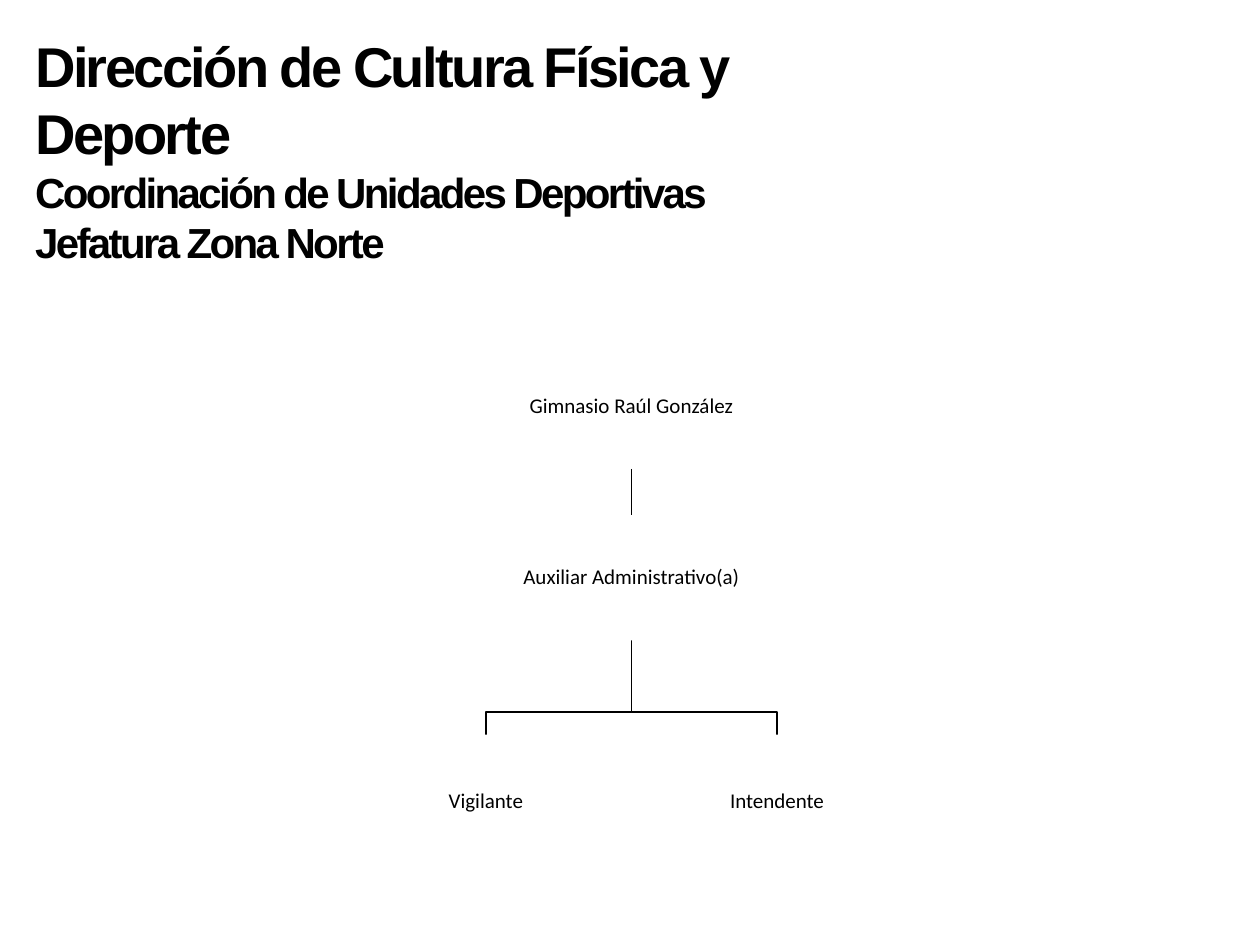
from dataclasses import dataclass

from pptx import Presentation
from pptx.dml.color import RGBColor
from pptx.enum.shapes import MSO_CONNECTOR, MSO_SHAPE
from pptx.enum.text import MSO_ANCHOR, PP_ALIGN
from pptx.oxml.ns import qn
from pptx.util import Cm, Pt

STRAIGHT = MSO_CONNECTOR.STRAIGHT
RECTANGLE = MSO_SHAPE.RECTANGLE
TOP, MIDDLE = MSO_ANCHOR.TOP, MSO_ANCHOR.MIDDLE
LEFT, CENTER = PP_ALIGN.LEFT, PP_ALIGN.CENTER


@dataclass(frozen=True)
class Theme:
    ink: RGBColor = RGBColor(0, 0, 0)
    paper: RGBColor = RGBColor(255, 255, 255)
    heading_font: str = "Arial"
    role_font: str = "Calibri"
    title_size: int = 32
    subtitle_size: int = 24
    role_size: int = 12
    line_width: int = 1


@dataclass(frozen=True)
class Box:
    left: float
    top: float
    width: float
    height: float

    @property
    def center(self):
        return self.left + self.width / 2

    @property
    def bottom(self):
        return self.top + self.height

    def lengths(self):
        return [Cm(side) for side in (self.left, self.top, self.width, self.height)]


THEME = Theme()


def write(paragraph, text, *, font, size, bold=False, tracking=None,
          align=LEFT, line_spacing=None):
    paragraph.alignment = align
    paragraph.line_spacing = line_spacing
    run = paragraph.add_run()
    run.text = text
    run.font.name = font
    run.font.size = Pt(size)
    run.font.bold = bold
    run.font.color.rgb = THEME.ink
    if tracking is not None:
        run.font._element.set("spc", str(int(tracking * 100)))


def set_frame(frame, *, anchor, inset_x, inset_y):
    frame.word_wrap = True
    frame.vertical_anchor = anchor
    frame.margin_left = frame.margin_right = Cm(inset_x)
    frame.margin_top = frame.margin_bottom = Cm(inset_y)


def draw_heading(slide, box, lines):
    frame = slide.shapes.add_textbox(*box.lengths()).text_frame
    set_frame(frame, anchor=TOP, inset_x=0.25, inset_y=0.13)
    for index, (text, size) in enumerate(lines):
        paragraph = frame.add_paragraph() if index else frame.paragraphs[0]
        write(paragraph, text, font=THEME.heading_font, size=size, bold=True,
              tracking=-1.5)


def draw_role(shapes, box, title):
    role = shapes.add_shape(RECTANGLE, *box.lengths())
    role.shadow.inherit = False
    role.fill.solid()
    role.fill.fore_color.rgb = THEME.paper
    role.line.fill.background()
    set_frame(role.text_frame, anchor=MIDDLE, inset_x=0.02, inset_y=0.02)
    write(role.text_frame.paragraphs[0], title, font=THEME.role_font,
          size=THEME.role_size, align=CENTER, line_spacing=0.9)


def style_line(line):
    line.color.rgb = THEME.ink
    line.width = Pt(THEME.line_width)


def draw_link(shapes, parent, child):
    link = shapes.add_connector(STRAIGHT, Cm(parent.center), Cm(parent.bottom),
                                Cm(child.center), Cm(child.top))
    style_line(link.line)
    properties = link._element.spPr
    properties.append(properties.makeelement(qn("a:effectLst"), {}))


def draw_branch(shapes, parent, child, drop):
    bend = child.top - drop
    corners = [(parent.center, bend), (child.center, bend), (child.center, child.top)]
    builder = shapes.build_freeform(Cm(parent.center), Cm(parent.bottom))
    builder.add_line_segments([(Cm(x), Cm(y)) for x, y in corners], close=False)
    branch = builder.convert_to_shape()
    branch.shadow.inherit = False
    branch.fill.background()
    style_line(branch.line)


def draw_organization(slide, box, venue, assistant, staff):
    role_width, role_height, level_gap = 6.04, 2.52, 0.94
    staff_width, staff_height, branch_drop = 4.93, 2.69, 0.46
    role_left = box.center - role_width / 2
    venue_box = Box(role_left, box.top, role_width, role_height)
    assistant_box = Box(role_left, venue_box.bottom + level_gap, role_width, role_height)
    step = (box.width - staff_width) / (len(staff) - 1)
    staff_boxes = [Box(box.left + index * step, box.bottom - staff_height,
                       staff_width, staff_height) for index in range(len(staff))]

    shapes = slide.shapes.add_group_shape().shapes
    for staff_box in staff_boxes:
        draw_branch(shapes, assistant_box, staff_box, branch_drop)
    draw_link(shapes, venue_box, assistant_box)
    boxes = [venue_box, assistant_box, *staff_boxes]
    for role_box, title in zip(boxes, [venue, assistant, *staff]):
        draw_role(shapes, role_box, title)


def main():
    presentation = Presentation()
    presentation.slide_width, presentation.slide_height = Cm(25.4), Cm(19.05)
    slide = presentation.slides.add_slide(presentation.slide_layouts[6])
    draw_heading(slide, Box(0.46, 0.51, 18.31, 5.05), [
        ("Dirección de Cultura Física y Deporte", THEME.title_size),
        ("Coordinación de Unidades Deportivas", THEME.subtitle_size),
        ("Jefatura Zona Norte", THEME.subtitle_size),
    ])
    draw_organization(slide, Box(7.33, 6.93, 10.8, 10.57),
                      "Gimnasio Raúl González", "Auxiliar Administrativo(a)",
                      ["Vigilante", "Intendente"])
    presentation.save("out.pptx")


if __name__ == "__main__":
    main()
